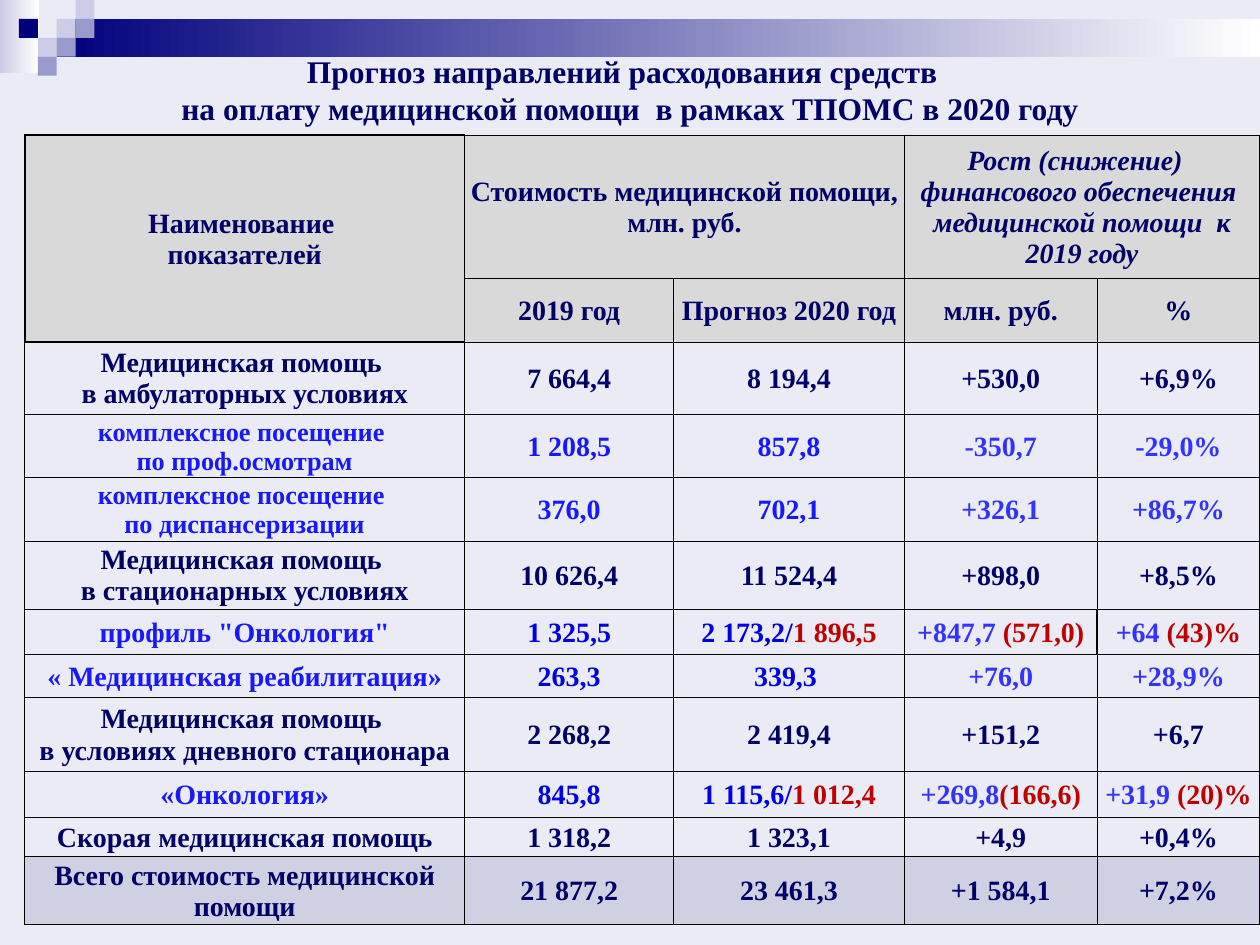
"""Build the slide on planned medical care spending in 2020."""
from lxml import etree
from pptx import Presentation
from pptx.dml.color import RGBColor
from pptx.enum import shapes, text
from pptx.oxml import ns
from pptx.util import Pt

FONT = "Times New Roman"
NAVY = RGBColor(0x00, 0x00, 0x66)
BLUE = RGBColor(0x18, 0x18, 0xFF)
DEEP_BLUE = RGBColor(0x00, 0x00, 0xE4)
LIGHT_BLUE = RGBColor(0x33, 0x33, 0xFF)
RED = RGBColor(0xC0, 0x00, 0x00)
GREY = RGBColor(0xD9, 0xD9, 0xD9)
LILAC = RGBColor(0xD0, 0xD0, 0xE3)
PAPER = RGBColor(0xEB, 0xEB, 0xF5)
WHITE = RGBColor(0xFF, 0xFF, 0xFF)
BAR = RGBColor(0x00, 0x00, 0x7D)
PALE = RGBColor(0xCC, 0xCC, 0xE6)
MID = RGBColor(0x99, 0x99, 0xCC)

TITLE = [
    "Прогноз направлений расходования средств  ",
    "на оплату медицинской помощи  в рамках ТПОМС в 2020 году",
]
GRADIENTS = [(0, 0, 22.3, 41.8, PALE), (32.4, 10.8, 687.6, 21.6, BAR)]
SQUARE = 10.8
SQUARES = [(3, 1, PALE), (4, 0, PALE), (4, 1, MID), (2, 2, PALE),
           (1, 1, BAR), (3, 2, MID), (2, 3, MID)]

COLUMNS = [251.3, 119.5, 131.8, 110.2, 92.9]
STYLES = {
    "head": ([NAVY] * 5, GREY),
    "main": ([NAVY] * 5, None),
    "visit": ([BLUE] * 3 + [LIGHT_BLUE] * 2, None),
    "profile": ([BLUE] + [DEEP_BLUE] * 2 + [LIGHT_BLUE] * 2, None),
    "total": ([NAVY] * 5, LILAC),
}
ROWS = [
    ("head", 82.1, ["Наименование \vпоказателей", "Стоимость медицинской помощи, млн. руб.", "",
                    "Рост (снижение)  \vфинансового обеспечения  медицинской помощи  к 2019 году", ""]),
    ("head", 36, ["", "2019 год", "Прогноз 2020 год", "млн. руб.", "%"]),
    ("main", 41.4, ["Медицинская помощь \vв амбулаторных условиях", "7 664,4", "8 194,4", "+530,0", "+6,9%"]),
    ("visit", 36, ["комплексное посещение \nпо проф.осмотрам", "1 208,5", "857,8", "-350,7", "-29,0%"]),
    ("visit", 36.4, ["комплексное посещение \nпо диспансеризации", "376,0", "702,1", "+326,1", "+86,7%"]),
    ("main", 38.9, ["Медицинская помощь \vв стационарных условиях", "10 626,4", "11 524,4", "+898,0", "+8,5%"]),
    ("profile", 25.8, ['профиль "Онкология"', "1 325,5", ("2 173,2/", "1 896,5"),
                       ("+847,7 ", "(571,0)"), ("+64 ", "(43)%")]),
    ("profile", 24.5, ["« Медицинская реабилитация»", "263,3", "339,3 ", "+76,0", "+28,9%"]),
    ("main", 42.4, ["Медицинская помощь \vв условиях дневного стационара", "2 268,2", "2 419,4", "+151,2", "+6,7"]),
    ("profile", 26.4, ["«Онкология»", "845,8", ("1 115,6/", "1 012,4"),
                       ("+269,8", "(166,6)"), ("+31,9 ", "(20)%")]),
    ("main", 22.3, ["Скорая медицинская помощь", "1 318,2", "1 323,1", "+4,9", "+0,4%"]),
    ("total", 38.9, ["Всего стоимость медицинской помощи", "21 877,2", "23 461,3", "+1 584,1", "+7,2%"]),
]
MERGES = [((0, 0), (1, 0)), ((0, 1), (0, 2)), ((0, 3), (0, 4))]
HEAVY = {(0, 0): "LTB", (1, 0): "LB", (2, 0): "T", (6, 2): "B", (6, 3): "RB",
         (6, 4): "LRB", (7, 2): "LTRB", (7, 3): "LT", (7, 4): "T", (8, 2): "T"}


def add_box(s, x, y, w, h):
    sp = s.shapes.add_shape(shapes.MSO_SHAPE.RECTANGLE, Pt(x), Pt(y), Pt(w), Pt(h))
    sp.shadow.inherit = False
    sp.line.fill.background()
    return sp


def style_paragraph(p, size, color, italic=False):
    p.alignment = text.PP_ALIGN.CENTER
    f = p.font
    f.name, f.size, f.bold, f.italic = FONT, Pt(size), True, italic
    if color is not None:
        f.color.rgb = color


def add_borders(cell, heavy):
    tc_pr = cell._tc.get_or_add_tcPr()
    for i, side in enumerate("LRTB"):
        ln = etree.Element(ns.qn(f"a:ln{side}"), w=str(Pt(1 if side in heavy else 0.5)))
        fill = etree.SubElement(ln, ns.qn("a:solidFill"))
        etree.SubElement(fill, ns.qn("a:srgbClr"), val="000000")
        tc_pr.insert(i, ln)


def fill_cell(cell, content, size, color, italic):
    tf = cell.text_frame
    if isinstance(content, tuple):
        p = tf.paragraphs[0]
        style_paragraph(p, size, None)
        for part, part_color in zip(content, (color, RED)):
            r = p.add_run()
            r.text, r.font.color.rgb = part, part_color
    else:
        tf.text = content
        for p in tf.paragraphs:
            style_paragraph(p, size, color, italic)


def add_decoration(s):
    for *box, color in GRADIENTS:
        fill = add_box(s, *box).fill
        fill.gradient()
        fill.gradient_angle = 0
        for stop, stop_color, position in zip(fill.gradient_stops, (color, WHITE), (0, 1)):
            stop.color.rgb, stop.position = stop_color, position
    for col, row, color in SQUARES:
        fill = add_box(s, col * SQUARE, row * SQUARE, SQUARE, SQUARE).fill
        fill.solid()
        fill.fore_color.rgb = color


def add_cost_table(s):
    height = sum(row[1] for row in ROWS)
    table = s.shapes.add_table(len(ROWS), len(COLUMNS), Pt(14.2), Pt(77.2),
                               Pt(sum(COLUMNS)), Pt(height)).table
    table.first_row = table.horz_banding = False
    for column, width in zip(table.columns, COLUMNS):
        column.width = Pt(width)
    for i, (kind, row_height, contents) in enumerate(ROWS):
        table.rows[i].height = Pt(row_height)
        colors, background = STYLES[kind]
        for j, content in enumerate(contents):
            cell = table.cell(i, j)
            cell.margin_left = cell.margin_right = cell.margin_top = Pt(0.7)
            cell.margin_bottom = 0
            cell.vertical_anchor = text.MSO_ANCHOR.MIDDLE
            if background is None:
                cell.fill.background()
            else:
                cell.fill.solid()
                cell.fill.fore_color.rgb = background
            add_borders(cell, HEAVY.get((i, j), ""))
            size = 15 if kind == "visit" and j == 0 else 16
            fill_cell(cell, content, size, colors[j], italic=(i, j) == (0, 3))
    for first, last in MERGES:
        table.cell(*first).merge(table.cell(*last))


def add_title(s):
    tf = s.shapes.add_textbox(Pt(36.7), Pt(26), Pt(646.6), Pt(51)).text_frame
    tf.word_wrap = True
    tf.auto_size = text.MSO_AUTO_SIZE.SHAPE_TO_FIT_TEXT
    tf.text = "\n".join(TITLE)
    for p in tf.paragraphs:
        style_paragraph(p, 18, NAVY)


def main():
    prs = Presentation()
    prs.slide_width, prs.slide_height = Pt(720), Pt(540)
    s = prs.slides.add_slide(prs.slide_layouts[6])
    s.background.fill.solid()
    s.background.fill.fore_color.rgb = PAPER
    add_decoration(s)
    add_cost_table(s)
    add_title(s)
    prs.save("out.pptx")


if __name__ == "__main__":
    main()
